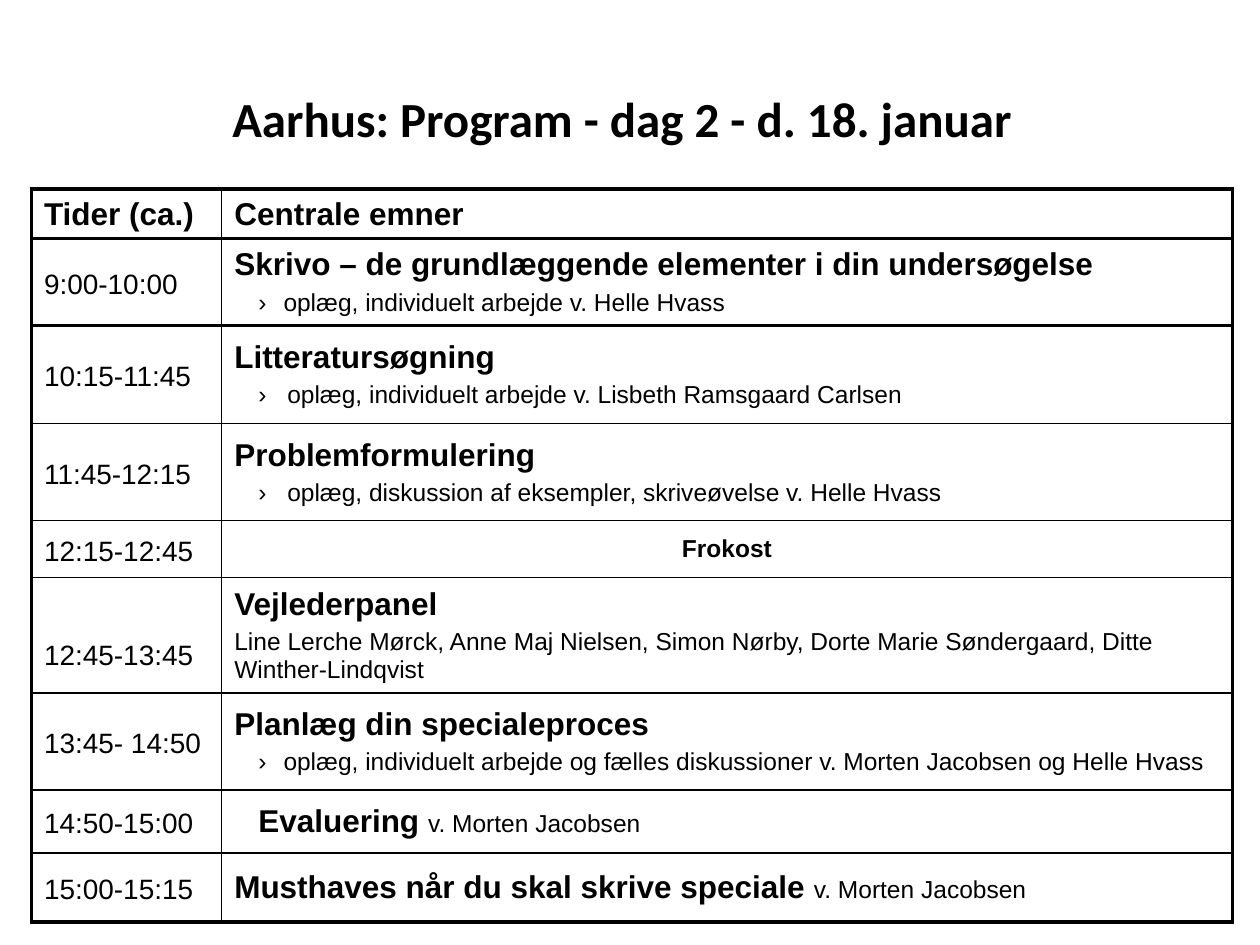
from pptx import Presentation
from pptx.dml.color import RGBColor
from pptx.enum import text as t
from pptx.oxml.ns import qn
from pptx.util import Inches, Pt
from lxml import etree

TITLE = "Aarhus: Program - dag 2 - d. 18. januar"
HEADER = ("Tider (ca.)", "Centrale emner")
# Each session: time, row height, heading, and optional details:
# speaker (same line), bullet (with text indent), panel (plain second line)
SESSIONS = [
    ("9:00-10:00", 0.69, "Skrivo – de grundlæggende elementer i din undersøgelse",
     {"bullet": "oplæg, individuelt arbejde v. Helle Hvass"}),
    ("10:15-11:45", 0.78, "Litteratursøgning",
     {"bullet": "oplæg, individuelt arbejde v. Lisbeth Ramsgaard Carlsen", "indent": 0.42}),
    ("11:45-12:15", 0.77, "Problemformulering",
     {"bullet": "oplæg, diskussion af eksempler, skriveøvelse v. Helle Hvass", "indent": 0.42}),
    ("12:15-12:45", 0.45, "Frokost", {"break": True}),
    ("12:45-13:45", 0.86, "Vejlederpanel",
     {"panel": "Line Lerche Mørck, Anne Maj Nielsen, Simon Nørby, "
               "Dorte Marie Søndergaard, Ditte Winther-Lindqvist", "time_top": 0.34}),
    ("13:45- 14:50", 0.77, "Planlæg din specialeproces",
     {"bullet": "oplæg, individuelt arbejde og fælles diskussioner "
                "v. Morten Jacobsen og Helle Hvass"}),
    ("14:50-15:00", 0.5, "Evaluering ", {"speaker": "v. Morten Jacobsen", "margin": 0.19}),
    ("15:00-15:15", 0.55, "Musthaves når du skal skrive speciale ",
     {"speaker": "v. Morten Jacobsen"}),
]
HEADER_HEIGHT = 0.39
COLUMNS = (1.51, 8.02)
BULLET_LEFT = 0.19
INK = "000000"
THIN, THICK = 1, 2.25


def style(font, size, bold=False, name="Arial"):
    font.name, font.size, font.bold = name, Pt(size), bold
    font.color.rgb = RGBColor.from_string(INK)


def set_margin(paragraph, left, first_line=0.0):
    props = paragraph._p.get_or_add_pPr()
    props.set("marL", str(Inches(left)))
    props.set("indent", str(Inches(first_line)))
    return props


def add_border(cell, side, width):
    props = cell._tc.get_or_add_tcPr()
    line = etree.SubElement(props, qn(f"a:ln{side}"), w=str(Pt(width)))
    fill = etree.SubElement(line, qn("a:solidFill"))
    etree.SubElement(fill, qn("a:srgbClr"), val=INK)


def write_time(cell, words, size, bold=False):
    paragraph = cell.text_frame.paragraphs[0]
    paragraph.text = words
    paragraph.line_spacing = Pt(21)
    style(paragraph.font, size, bold)


def write_topic(cell, heading, details):
    frame = cell.text_frame
    first = frame.paragraphs[0]
    if "break" in details:
        first.text = heading
        first.alignment = t.PP_ALIGN.CENTER
        style(first.font, 14, True)
        return
    set_margin(first, details.get("margin", 0))
    first.space_after = Pt(3.6)
    run = first.add_run()
    run.text = heading
    style(run.font, 18, True)
    if "speaker" in details:
        run = first.add_run()
        run.text = details["speaker"]
        style(run.font, 14)
    elif "panel" in details:
        panel = frame.add_paragraph()
        panel.text = details["panel"]
        style(panel.font, 14)
    else:
        item = frame.add_paragraph()
        item.text = details["bullet"]
        item.space_after = Pt(2.8)
        indent = details.get("indent", 0.39)
        props = set_margin(item, indent, BULLET_LEFT - indent)
        etree.SubElement(props, qn("a:buFont"), typeface="Arial")
        etree.SubElement(props, qn("a:buChar"), char="›")
        style(item.font, 14)


def main():
    deck = Presentation()
    deck.slide_width, deck.slide_height = Inches(10), Inches(7.5)
    slide = deck.slides.add_slide(deck.slide_layouts[6])

    title = slide.shapes.add_textbox(Inches(0.33), Inches(0.58), Inches(9.21), Inches(0.71))
    title.text_frame.word_wrap = True
    title.text_frame.vertical_anchor = t.MSO_ANCHOR.MIDDLE
    heading = title.text_frame.paragraphs[0]
    heading.text = TITLE
    heading.alignment = t.PP_ALIGN.CENTER
    style(heading.font, 28, True, "Calibri")

    heights = [HEADER_HEIGHT] + [session[1] for session in SESSIONS]
    rows = len(heights)
    program = slide.shapes.add_table(rows, len(COLUMNS), Inches(0.25), Inches(1.5),
                                     Inches(sum(COLUMNS)), Inches(sum(heights))).table
    program.first_row = program.horz_banding = False
    for column, width in zip(program.columns, COLUMNS):
        column.width = Inches(width)
    for row, height in zip(program.rows, heights):
        row.height = Inches(height)

    thick_rules = (0, 1, 2, rows)
    for r in range(rows):
        top, bottom = (THICK if edge in thick_rules else THIN for edge in (r, r + 1))
        for c in range(len(COLUMNS)):
            cell = program.cell(r, c)
            cell.vertical_anchor = t.MSO_ANCHOR.MIDDLE
            sides = (THICK, THIN) if c == 0 else (THIN, THICK)
            for side, width in zip("LRTB", (*sides, top, bottom)):
                add_border(cell, side, width)
            cell.fill.background()

    for c, label in enumerate(HEADER):
        write_time(program.cell(0, c), label, 18, True)
    for r, (time, _, topic, details) in enumerate(SESSIONS, start=1):
        time_cell = program.cell(r, 0)
        write_time(time_cell, time, 16)
        time_cell.margin_top = Inches(details.get("time_top", 0.05))
        write_topic(program.cell(r, 1), topic, details)

    deck.save("out.pptx")


if __name__ == "__main__":
    main()
